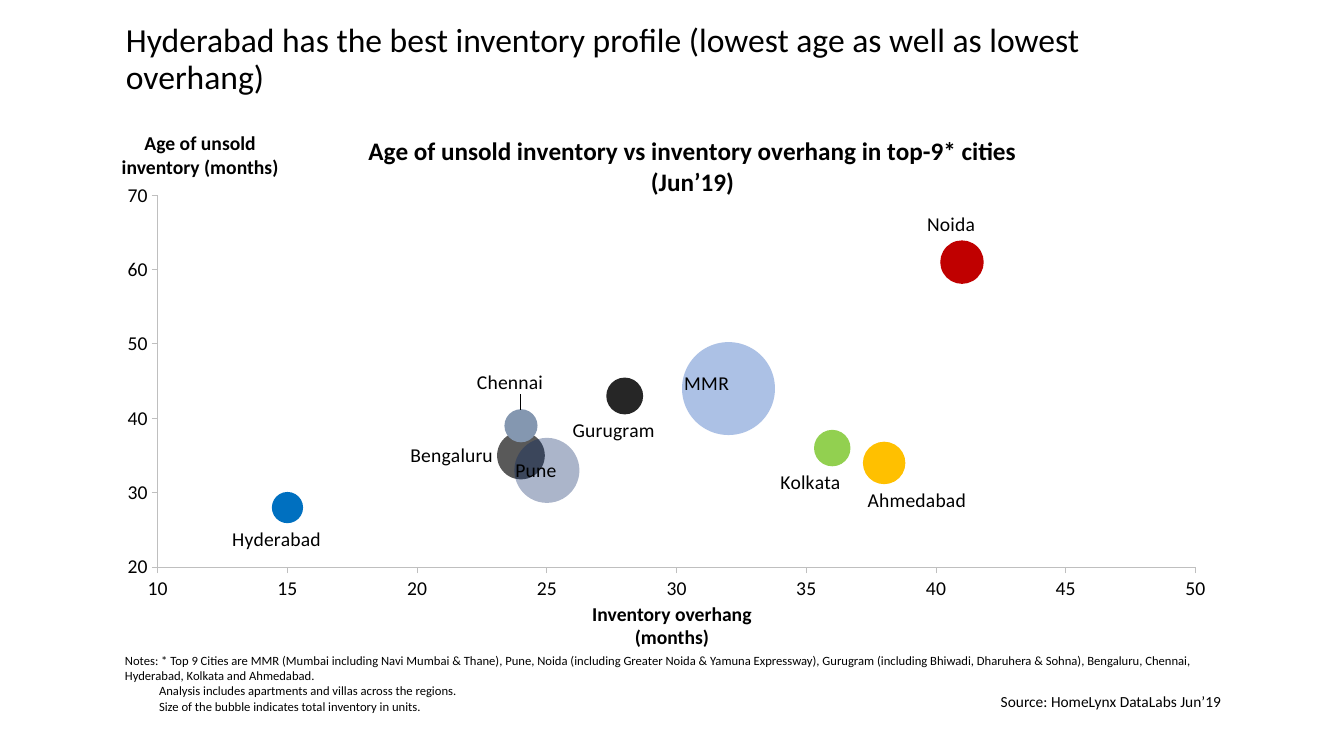
from lxml import etree
from pptx import Presentation
from pptx.chart.data import BubbleChartData
from pptx.dml.color import RGBColor
from pptx.enum.chart import XL_AXIS_CROSSES, XL_CHART_TYPE, XL_LABEL_POSITION, XL_TICK_MARK
from pptx.enum.text import MSO_ANCHOR, PP_ALIGN
from pptx.oxml.ns import qn
from pptx.util import Cm, Pt

LEFT, CENTER = PP_ALIGN.LEFT, PP_ALIGN.CENTER
MIDDLE = MSO_ANCHOR.MIDDLE
BUBBLE = XL_CHART_TYPE.BUBBLE
AXIS_MINIMUM = XL_AXIS_CROSSES.MINIMUM
TICK_OUTSIDE, TICK_NONE = XL_TICK_MARK.OUTSIDE, XL_TICK_MARK.NONE
ABOVE, BELOW = XL_LABEL_POSITION.ABOVE, XL_LABEL_POSITION.BELOW
BESIDE, INSIDE = XL_LABEL_POSITION.LEFT, XL_LABEL_POSITION.CENTER

FONT = "Calibri"
BLACK = RGBColor(0x00, 0x00, 0x00)
AXIS_GRAY = RGBColor(0xBF, 0xBF, 0xBF)
AMBER = RGBColor(0xFF, 0xC0, 0x00)
GRAY = RGBColor(0x59, 0x59, 0x59)
SLATE = RGBColor(0x84, 0x97, 0xB0)
CHARCOAL = RGBColor(0x26, 0x26, 0x26)
BLUE = RGBColor(0x00, 0x70, 0xC0)
GREEN = RGBColor(0x92, 0xD0, 0x50)
INDIGO = RGBColor(0x44, 0x72, 0xC4)
RED = RGBColor(0xC0, 0x00, 0x00)
NAVY = RGBColor(0x00, 0x20, 0x60)

CITIES = [
    ("Ahmedabad", 38, 34, 61000, AMBER, 100, BELOW, (0.03, 0)),
    ("Bengaluru", 24, 35, 77000, GRAY, 100, BESIDE, (0, 0)),
    ("Chennai", 24, 39, 37000, SLATE, 100, ABOVE, (-0.01, -0.02)),
    ("Gurugram", 28, 43, 46000, CHARCOAL, 100, BELOW, (-0.01, 0)),
    ("Hyderabad", 15, 28, 33000, BLUE, 100, BELOW, (-0.01, 0)),
    ("Kolkata", 36, 36, 45000, GREEN, 100, BELOW, (-0.02, 0)),
    ("MMR", 32, 44, 292000, INDIGO, 44, INSIDE, (-0.02, -0.01)),
    ("Noida", 41, 61, 64000, RED, 100, ABOVE, (-0.01, 0)),
    ("Pune", 25, 33, 143000, NAVY, 33, INSIDE, (-0.01, 0)),
]
NOTES = [
    "Notes: * Top 9 Cities are MMR (Mumbai including Navi Mumbai & Thane), Pune, "
    "Noida (including Greater Noida & Yamuna Expressway), Gurugram (including "
    "Bhiwadi, Dharuhera & Sohna), Bengaluru, Chennai, Hyderabad, Kolkata and Ahmedabad.",
    "Analysis includes apartments and villas across the regions.",
    "Size of the bubble indicates total inventory in units.",
]


def style_font(font, size, bold=False):
    font.name = FONT
    font.size = Pt(size)
    font.bold = bold
    font.color.rgb = BLACK


def write_lines(frame, lines, size, bold=False, alignment=LEFT):
    for index, line in enumerate(lines):
        paragraph = frame.add_paragraph() if index else frame.paragraphs[0]
        paragraph.text = line
        paragraph.alignment = alignment
        style_font(paragraph.font, size, bold)


def add_text(slide, position, lines, size, bold=False, alignment=LEFT):
    shape = slide.shapes.add_textbox(*(Cm(length) for length in position))
    shape.text_frame.word_wrap = True
    write_lines(shape.text_frame, lines, size, bold, alignment)
    return shape.text_frame


def set_layout(parent, index, **settings):
    for old_layout in parent.findall(qn("c:layout")):
        parent.remove(old_layout)
    layout = etree.Element(qn("c:layout"))
    manual = etree.SubElement(layout, qn("c:manualLayout"))
    for name, value in settings.items():
        etree.SubElement(manual, qn("c:" + name)).set("val", str(value))
    parent.insert(index, layout)


def style_axis(axis, minimum, maximum, step):
    axis.minimum_scale, axis.maximum_scale = minimum, maximum
    axis.major_unit = step
    axis.has_major_gridlines = False
    axis.has_title = False
    axis.major_tick_mark = TICK_OUTSIDE
    axis.minor_tick_mark = TICK_NONE
    axis.crosses = AXIS_MINIMUM
    axis.format.line.color.rgb = AXIS_GRAY
    axis.format.line.width = Pt(0.75)
    axis.tick_labels.number_format = "0"
    axis.tick_labels.number_format_is_linked = False
    style_font(axis.tick_labels.font, 14)


def style_bubble(point, city, color, opacity, position, shift):
    fill = point.format.fill
    fill.solid()
    fill.fore_color.rgb = color
    point.format.line.fill.background()
    if opacity < 100:
        rgb = fill._xPr.find(".//" + qn("a:srgbClr"))
        etree.SubElement(rgb, qn("a:alpha")).set("val", str(opacity * 1000))
    label = point.data_label
    write_lines(label.text_frame, [city], 14, alignment=CENTER)
    label.position = position
    if any(shift):
        set_layout(label._get_or_add_dLbl(), 1, x=shift[0], y=shift[1])


def add_city_chart(slide):
    data = BubbleChartData()
    series_data = data.add_series("Series 1")
    for _, overhang, age, units, *_ in CITIES:
        series_data.add_data_point(overhang, age, units)
    chart = slide.shapes.add_chart(
        BUBBLE, Cm(3.15), Cm(3.18), Cm(27.53), Cm(13.39), data).chart
    style_font(chart.font, 14)
    chart.has_legend = False
    chart.has_title = True
    write_lines(
        chart.chart_title.text_frame,
        ["Age of unsold inventory vs inventory overhang in top-9* cities", "(Jun’19)"],
        18, True, CENTER)
    set_layout(chart.chart_title._element, 1, xMode="edge", yMode="edge", x=0.22, y=0.01)
    set_layout(chart._chartSpace.chart.plotArea, 0, layoutTarget="inner",
               xMode="edge", yMode="edge", x=0.03, y=0.13, w=0.95, h=0.7)
    style_axis(chart.category_axis, 10, 50, 5)
    style_axis(chart.value_axis, 20, 70, 10)
    series = chart.plots[0].series[0]
    series.format.fill.solid()
    series.format.fill.fore_color.rgb = INDIGO
    for index, (city, _, _, _, *look) in enumerate(CITIES):
        style_bubble(series.points[index], city, *look)


def add_title(slide, text):
    title = slide.shapes.title
    title.left, title.top, title.width, title.height = Cm(2.92), Cm(0.79), Cm(28.12), Cm(1.45)
    title.text_frame.vertical_anchor = MIDDLE
    write_lines(title.text_frame, [text], 24)
    title.text_frame.paragraphs[0].line_spacing = 0.9


def add_notes(slide):
    frame = add_text(slide, (3.15, 16.33, 27.53, 1.8), NOTES, 9)
    frame.margin_left = 0
    for paragraph in frame.paragraphs[1:]:
        paragraph._p.get_or_add_pPr().set("marL", str(Cm(0.86)))


def main():
    presentation = Presentation()
    presentation.slide_width, presentation.slide_height = Cm(33.87), Cm(19.05)
    slide = presentation.slides.add_slide(presentation.slide_layouts[5])
    add_title(slide, "Hyderabad has the best inventory profile "
                     "(lowest age as well as lowest overhang)")
    add_notes(slide)
    add_text(slide, (2.06, 3.18, 5.97, 1.45),
             ["Age of unsold", "inventory (months)"], 14, True, CENTER)
    add_text(slide, (14.66, 15.04, 4.55, 1.45),
             ["Inventory overhang (months)"], 14, True, CENTER)
    add_text(slide, (24.97, 17.32, 8.71, 0.74), ["Source: HomeLynx DataLabs Jun’19"], 11)
    add_city_chart(slide)
    presentation.save("out.pptx")


if __name__ == "__main__":
    main()
